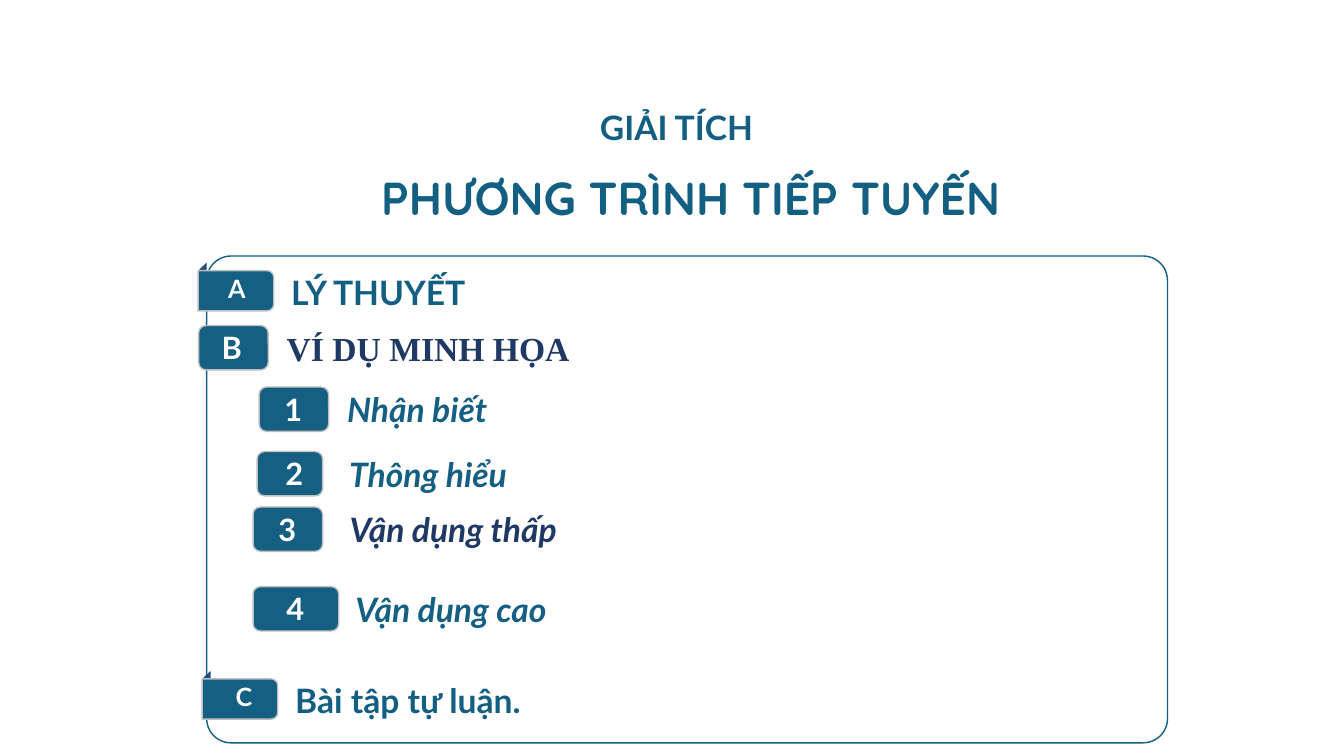
from dataclasses import dataclass

from pptx import Presentation
from pptx.dml.color import RGBColor
from pptx.enum.shapes import MSO_SHAPE as Preset
from pptx.enum.text import PP_ALIGN as Align
from pptx.shapes.autoshape import Shape
from pptx.slide import Slide
from pptx.util import Emu, Inches, Pt

# Square grid: 133.33 columns by 75 rows
SLIDE_WIDTH, SLIDE_HEIGHT = Inches(13.33), Inches(7.5)
CELL = SLIDE_HEIGHT / 75


@dataclass(frozen=True)
class Theme:
    teal: str = "135F82"
    badge_fill: str = "145F82"
    badge_line: str = "BFBFBF"
    navy: str = "203864"
    fold: str = "1F4E79"
    white: str = "FFFFFF"
    body_font: str = "Lato"
    title_font: str = "Quicksand"
    serif_font: str = "Times New Roman"
    title_size: int = 33
    label_size: int = 24
    badge_size: int = 22
    tab_size: int = 18


THEME = Theme()


@dataclass(frozen=True)
class Tab:
    """Section heading with a folded tab; left and top place the tab."""
    letter: str
    label: str
    left: float
    top: float
    letter_shift: float


@dataclass(frozen=True)
class Item:
    """Heading with a rounded badge; left and top place the badge."""
    mark: str
    label: str
    left: float
    top: float
    width: float
    mark_left: float
    label_left: float
    indent: float
    color: str = THEME.badge_fill
    font: str = THEME.body_font
    italic: bool = True


TABS = [
    Tab("A", "LÝ THUYẾT", 19.65, 26.85, 1.95),
    Tab("C", "Bài tập tự luận.", 20.05, 67.35, 2.25),
]
ITEMS = [
    Item("B", "VÍ DỤ MINH HỌA", 19.7, 32.3, 6.9, 21, 26.6, 0.83,
         THEME.navy, THEME.serif_font, False),
    Item("1", "Nhận biết", 25.7, 38.4, 6.9, 27.1, 32.6, 0.83),
    Item("2", "Thông hiểu", 25.5, 44.8, 6.5, 27.2, 33, 0.64),
    Item("3", "Vận dụng thấp", 25.1, 50.3, 6.9, 26.5, 32, 1.67, THEME.navy),
    Item("4", "Vận dụng cao", 25.1, 58.2, 8.5, 27.3, 33.6, 0.64),
]
TAB_WIDTH, TAB_HEIGHT = 7.5, 4
FOLD_WIDTH, FOLD_HEIGHT = 0.85, 0.8
BADGE_HEIGHT = 4.4
LABEL_WIDTH, LABEL_HEIGHT = 60, 5


def cells(count: float) -> Emu:
    return Emu(round(count * CELL))


def add_text(slide: Slide, text: str, left: float, top: float, width: float,
             height: float, *, size: int = THEME.label_size,
             color: str = THEME.teal, font: str = THEME.body_font,
             italic: bool = False, centered: bool = False,
             indent: float = 0, inset: float = 0.5) -> None:
    box = slide.shapes.add_textbox(
        cells(left), cells(top), cells(width), cells(height))
    frame = box.text_frame
    frame.word_wrap = not centered
    frame.margin_left = cells(1 + indent)
    frame.margin_top = frame.margin_bottom = cells(inset)
    paragraph = frame.paragraphs[0]
    paragraph.alignment = Align.CENTER if centered else Align.LEFT
    run = paragraph.add_run()
    run.text = text
    run.font.name = font
    run.font.size = Pt(size)
    run.font.bold = True
    run.font.italic = italic
    run.font.color.rgb = RGBColor.from_string(color)


def style(shape: Shape, fill: str | None, line: str | None) -> None:
    shape.shadow.inherit = False
    if fill:
        shape.fill.solid()
        shape.fill.fore_color.rgb = RGBColor.from_string(fill)
    else:
        shape.fill.background()
    if line:
        shape.line.color.rgb = RGBColor.from_string(line)
        shape.line.width = Pt(1)
    else:
        shape.line.fill.background()


def add_box(slide: Slide, preset: Preset, left: float, top: float,
            width: float, height: float, fill: str | None,
            line: str | None) -> Shape:
    shape = slide.shapes.add_shape(
        preset, cells(left), cells(top), cells(width), cells(height))
    style(shape, fill, line)
    return shape


def add_tab(slide: Slide, tab: Tab) -> None:
    add_text(slide, tab.label, tab.left + 8.25, tab.top - 0.35,
             LABEL_WIDTH, LABEL_HEIGHT)
    # Folded corner above the tab
    right = cells(tab.left + FOLD_WIDTH)
    builder = slide.shapes.build_freeform(right, cells(tab.top))
    builder.add_line_segments([
        (cells(tab.left), cells(tab.top)),
        (right, cells(tab.top - FOLD_HEIGHT)),
    ])
    style(builder.convert_to_shape(), THEME.fold, None)
    # An upright shape turned a quarter about its centre
    shift = (TAB_WIDTH - TAB_HEIGHT) / 2
    body = add_box(slide, Preset.ROUND_2_SAME_RECTANGLE, tab.left + shift,
                   tab.top - shift, TAB_HEIGHT, TAB_WIDTH,
                   THEME.badge_fill, THEME.badge_line)
    body.rotation = 90
    add_text(slide, tab.letter, tab.left + tab.letter_shift, tab.top - 0.25,
             3.8, 4, size=THEME.tab_size, color=THEME.white, centered=True)


def add_item(slide: Slide, item: Item) -> None:
    add_text(slide, item.label, item.label_left, item.top - 0.3,
             LABEL_WIDTH, LABEL_HEIGHT, color=item.color, font=item.font,
             italic=item.italic, indent=item.indent)
    add_box(slide, Preset.ROUNDED_RECTANGLE, item.left, item.top, item.width,
            BADGE_HEIGHT, THEME.badge_fill, THEME.badge_line)
    add_text(slide, item.mark, item.mark_left, item.top - 0.15, 4, 4.7,
             size=THEME.badge_size, color=THEME.white, centered=True)


def main() -> None:
    presentation = Presentation()
    presentation.slide_width = SLIDE_WIDTH
    presentation.slide_height = SLIDE_HEIGHT
    slide = presentation.slides.add_slide(presentation.slide_layouts[6])

    # Frame and headings
    frame = add_box(slide, Preset.ROUNDED_RECTANGLE, 20.5, 25.4, 95.3, 48.3,
                    None, THEME.teal)
    frame.adjustments[0] = 0.05
    add_text(slide, "GIẢI TÍCH", 57.8, 10.4, 18.6, 4.5, centered=True,
             inset=0.2)
    add_text(slide, "PHƯƠNG TRÌNH TIẾP TUYẾN", 34.6, 16.3, 67.8, 6.6,
             size=THEME.title_size, font=THEME.title_font, centered=True)

    # Contents
    for tab in TABS:
        add_tab(slide, tab)
    for item in ITEMS:
        add_item(slide, item)

    presentation.save("out.pptx")


if __name__ == "__main__":
    main()
